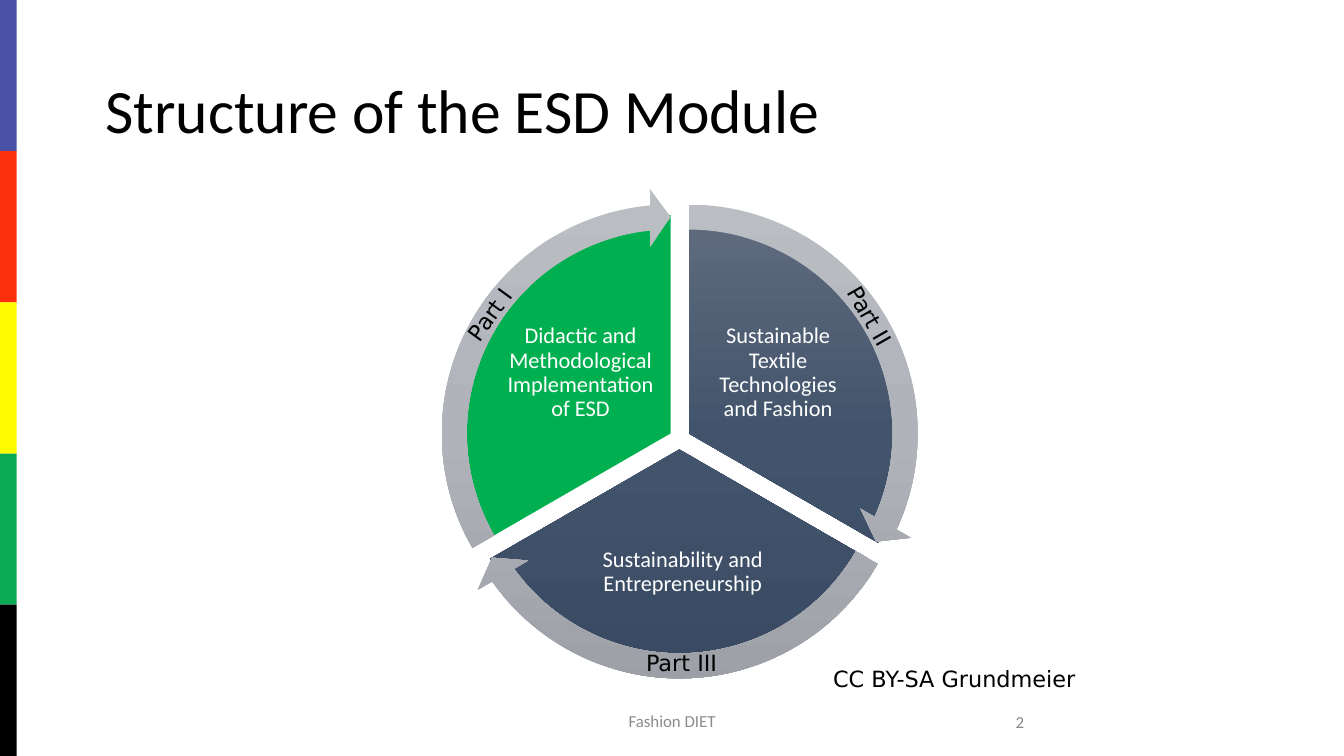
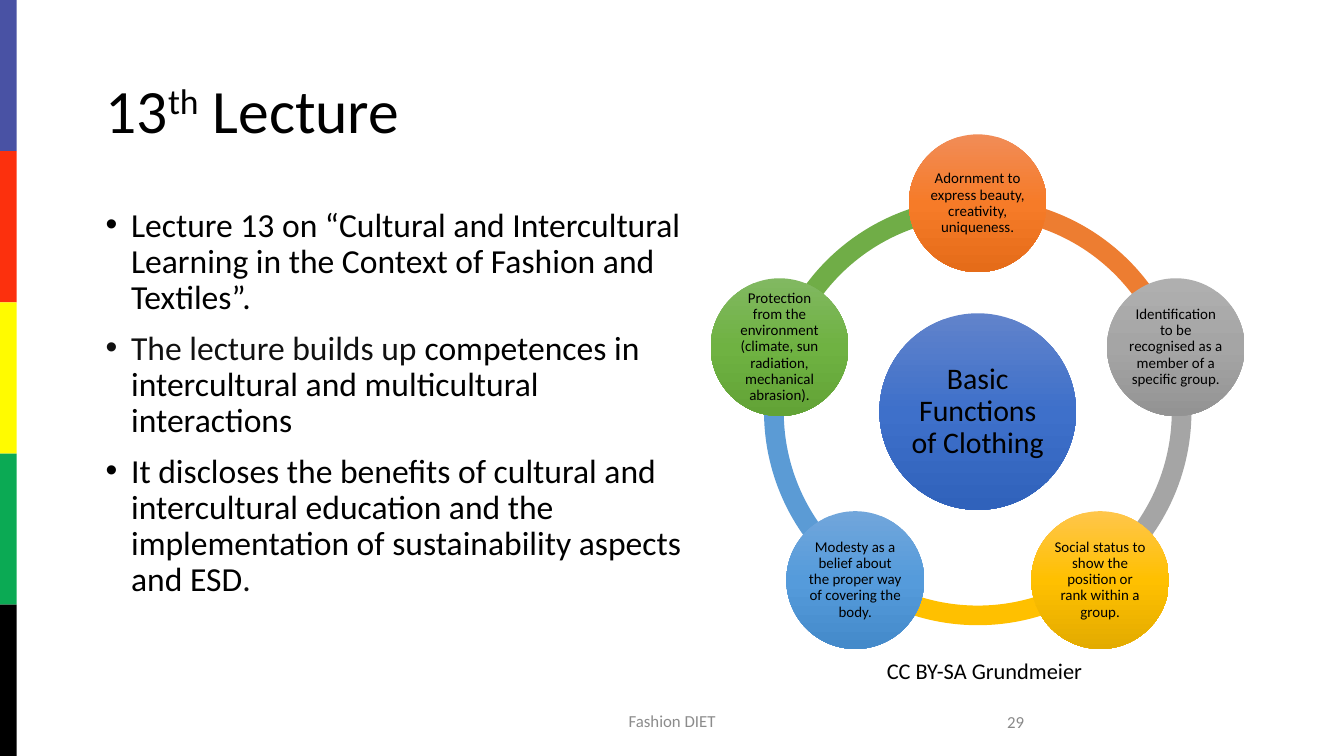
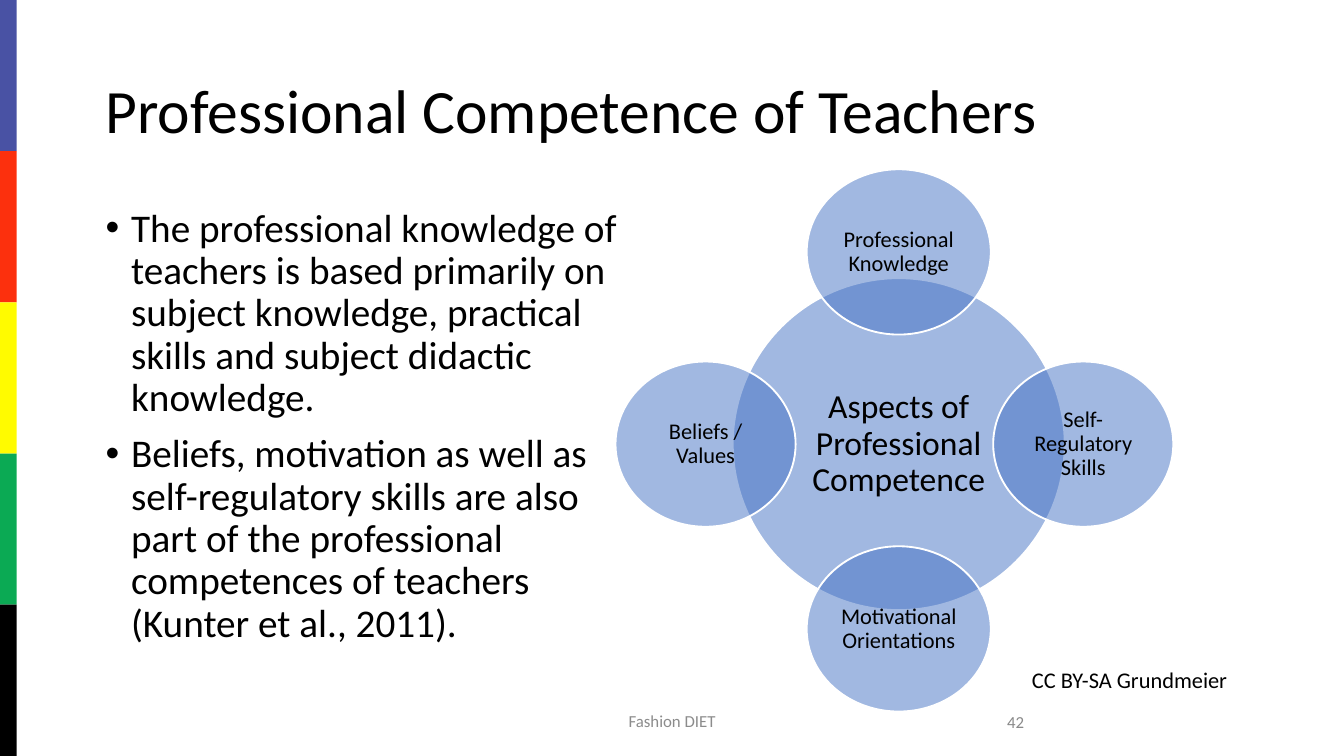
from copy import deepcopy
from math import cos, radians, sin

from lxml.etree import SubElement
from pptx import Presentation
from pptx.dml.color import RGBColor
from pptx.enum.shapes import MSO_SHAPE
from pptx.enum.text import MSO_ANCHOR, MSO_AUTO_SIZE, PP_ALIGN
from pptx.oxml.ns import qn
from pptx.util import Inches, Pt

COLS, ROWS = 80, 45
FULL_TURN = 216
INK = {
    "black": "000000", "soft": "111111", "white": "FFFFFF",
    "foot": "8C8C8C", "page": "898989", "leaf": "00B050", "blue": "4472C4",
}
BANDS = ["4952A4", "FC300D", "FFFB00", "0BAA54", "000000"]
FADES = {
    "slate": ["606B7D", "42546C", "394A62"],
    "steel": ["BABDC2", "B0B3BA", "9C9FA6"],
    "hub": ["6183CB", "3E70CA", "3062BB"],
    "orange": ["F18C57", "F67B28", "E56C19"],
    "grey": ["AFAFAF", "A5A5A5", "939393"],
    "gold": ["FFC64B", "FFC000", "E3AB00"],
    "sky": ["71A6DB", "559BDB", "448ACA"],
    "green": ["81B861", "6FB242", "62A336"],
}
ARCS = {"orange": "ED7D31", "grey": "A5A5A5", "gold": "FFC000",
        "sky": "5B9BD5", "green": "70AD47"}
CREDIT = "CC BY-SA Grundmeier"


class Deck:
    """Holds the shared style and the current slide on a grid of 80 by 45 cells."""

    def __init__(self):
        self.show = Presentation()
        self.show.slide_width = Inches(10)
        self.show.slide_height = Inches(5.625)
        self.cell = self.show.slide_width / COLS
        self.slide = None

    def place(self, box):
        return [round(n * self.cell) for n in box]

    def open(self, title, page):
        self.slide = self.show.slides.add_slide(self.show.slide_layouts[6])
        tall = ROWS / len(BANDS)
        for i, hue in enumerate(BANDS):
            self.shape(MSO_SHAPE.RECTANGLE, (0, i * tall, 1, tall), hue)
        self.text((5.5, 2.4, 69, 8.7), [title], 33, mid=True, lead=0.9)
        self.text((26.5, 41.7, 27, 2.4), ["Fashion DIET"], 9, "foot",
                  PP_ALIGN.CENTER, mid=True)
        self.text((43.75, 41.75, 18, 2.4), [str(page)], 9, "page",
                  PP_ALIGN.RIGHT, mid=True)

    def shape(self, kind, box, fill, knobs=(), clear=None, edge=None):
        item = self.slide.shapes.add_shape(kind, *self.place(box))
        item.shadow.inherit = False
        for i, knob in enumerate(knobs):
            item.adjustments[i] = knob
        if isinstance(fill, list):
            self.fade(item, fill)
        else:
            item.fill.solid()
            item.fill.fore_color.rgb = RGBColor.from_string(fill)
        if clear:
            tint = item._element.spPr.find(".//" + qn("a:srgbClr"))
            SubElement(tint, qn("a:alpha")).set("val", str(clear * 1000))
        if edge:
            item.line.color.rgb = RGBColor.from_string(edge)
            item.line.width = Pt(1)
        else:
            item.line.fill.background()

    def fade(self, item, hues):
        item.fill.gradient()
        item.fill.gradient_angle = 270
        stops = item._element.spPr.find(".//" + qn("a:gsLst"))
        stops.insert(1, deepcopy(stops[0]))
        for i, stop in enumerate(item.fill.gradient_stops):
            stop.color.rgb = RGBColor.from_string(hues[i])
            stop.position = i / 2

    def text(self, box, paras, size, ink="black", align=PP_ALIGN.LEFT, mid=False,
             lead=None, inset=None, font="Calibri", turn=0, grow=False, dots=False):
        item = self.slide.shapes.add_textbox(*self.place(box))
        item.rotation = turn
        frame = item.text_frame
        frame.word_wrap = True
        frame.auto_size = MSO_AUTO_SIZE.SHAPE_TO_FIT_TEXT if grow else MSO_AUTO_SIZE.NONE
        frame.vertical_anchor = MSO_ANCHOR.MIDDLE if mid else MSO_ANCHOR.TOP
        if inset is not None:
            frame.margin_left = frame.margin_right = Inches(inset)
            frame.margin_top = frame.margin_bottom = Inches(inset)
        for i, runs in enumerate(paras):
            para = frame.paragraphs[0] if i == 0 else frame.add_paragraph()
            para.alignment = align
            if lead:
                para.line_spacing = lead
            if i:
                para.space_before = Pt(7.5)
            if dots:
                self.dot(para)
            para.font.size = Pt(size)
            para.font.name = font
            para.font.color.rgb = RGBColor.from_string(INK[ink])
            for part in [runs] if isinstance(runs, str) else runs:
                self.run(para, part)

    def run(self, para, part):
        words, style = (part, None) if isinstance(part, str) else part
        run = para.add_run()
        run.text = words
        if style == "raised":
            run.font._element.set("baseline", "30000")
        elif style:
            run.font.color.rgb = RGBColor.from_string(INK[style])

    def dot(self, para):
        props = para._p.get_or_add_pPr()
        props.set("marL", str(Inches(0.19)))
        props.set("indent", str(-Inches(0.19)))
        SubElement(props, qn("a:buFont")).set("typeface", "Arial")
        SubElement(props, qn("a:buChar")).set("char", "•")

    def body(self, wide, paras, size):
        self.text((5.5, 12, wide, 28.5), paras, size, lead=0.9, dots=True)

    def label(self, box, words, size, ink="black", inset=0.02):
        self.text(box, [words], size, ink, PP_ALIGN.CENTER, True, 0.9, inset)

    def disc(self, spot, wide, tall, fill, words, size, inset=0.02, **look):
        x, y = spot
        self.shape(MSO_SHAPE.OVAL, (x - wide / 2, y - tall / 2, wide, tall), fill, **look)
        w, h = wide * 0.71, tall * 0.71
        self.label((x - w / 2, y - h / 2, w, h), words, size, inset=inset)

    def credit(self, x, y, wide, font="Calibri"):
        self.text((x, y, wide, 2.4), [CREDIT], 12, font=font, grow=True)


def module(deck):
    deck.open("Structure of the ESD Module", 2)
    wedges = [
        (28, 12.8, 162, 18, FADES["slate"], (41.68, 18.32, 9.28, 7.76),
         "Sustainable Textile Technologies and Fashion"),
        (27.44, 13.76, 18, 90, FADES["slate"], (33.68, 30.64, 13.92, 6.8),
         "Sustainability and Entrepreneurship"),
        (26.92, 12.8, 90, 162, INK["leaf"], (29.92, 18.32, 9.28, 7.76),
         "Didactic and Methodological Implementation of ESD"),
    ]
    for x, y, start, end, fill, box, words in wedges:
        deck.shape(MSO_SHAPE.PIE, (x, y, 26, 26), fill, (start, end))
        deck.label(box, words, 12, "white")
    for x, y, start, end, *_ in wedges:
        deck.shape(MSO_SHAPE.CIRCULAR_ARROW, (x - 1.6, y - 1.6, 29.2, 29.2),
                   FADES["steel"], (0.051, 3.275, end - 3.275, start, 0.059))
    for words, x, y, turn in [("Part I", 24.08, 17.52, 306),
                              ("Part II", 46.72, 17.6, 60.2),
                              ("Part III", 35.52, 38.24, 0)]:
        deck.text((x, y, 10.1, 2.4), [words], 12, align=PP_ALIGN.CENTER,
                  font="DejaVu Sans", turn=turn, grow=True)
    deck.credit(48.8, 39.2, 17.76, "DejaVu Sans")


def lecture(deck):
    deck.open(["13", ("th", "raised"), " Lecture"], 29)
    deck.body(37, [
        "Lecture 13 on “Cultural and Intercultural Learning in the Context of "
        "Fashion and Textiles”.",
        [("The lecture builds up ", "soft"),
         "competences in intercultural and multicultural interactions"],
        ["It discloses the benefits of cultural and intercultural education and "
         "the implementation of sustainability aspects and ESD", (".", "soft")],
    ], 18)
    x, y, reach, ring = 58.2, 24.5, 12.4, 25.44
    step = FULL_TURN / len(ARCS)
    for i, hue in reversed(list(enumerate(ARCS.values()))):
        start = (162 + i * step) % FULL_TURN
        deck.shape(MSO_SHAPE.BLOCK_ARC, (x - ring / 2, y - ring / 2, ring, ring), hue,
                   (start, (start + step) % FULL_TURN, 0.046))
    deck.disc((x, y), 11.7, 11.7, FADES["hub"], "Basic Functions of Clothing", 16)
    needs = [
        "Adornment to express beauty, creativity, uniqueness.",
        "Identification to be recognised as a member of a specific group.",
        "Social status to show the position or rank within a group.",
        "Modesty as a belief about the proper way of covering the body.",
        "Protection from the environment (climate, sun radiation, mechanical abrasion).",
    ]
    for i, (hue, words) in enumerate(zip(ARCS, needs)):
        turn = radians(i * 360 / len(needs) - 90)
        spot = x + reach * cos(turn), y + reach * sin(turn)
        deck.disc(spot, 8.2, 8.2, FADES[hue], words, 8, 0.01)
    deck.credit(52, 38.7, 16.64)


def skills(deck):
    deck.open("Professional Competence of Teachers", 42)
    deck.body(32, [
        "The professional knowledge of teachers is based primarily on subject "
        "knowledge, practical skills and subject didactic knowledge.",
        "Beliefs, motivation as well as self-regulatory skills are also part of "
        "the professional competences of teachers (Kunter et al., 2011).",
    ], 21)
    look = {"clear": 50, "edge": INK["white"]}
    x, y = 53.5, 26.44
    deck.disc((x, y), 19.76, 19.76, INK["blue"],
              "Aspects of Professional Competence", 18, 0.03, **look)
    for spot, wide, words in [((x, 15), 10.96, "Professional Knowledge"),
                              ((64.48, y), 10.72, "Self-Regulatory Skills"),
                              ((x, 37.44), 10.96, "Motivational Orientations"),
                              ((42, y), 10.72, "Beliefs / Values")]:
        deck.disc(spot, wide, 9.84, INK["blue"], words, 12, **look)
    deck.credit(60.64, 39.28, 13.84)


def main():
    deck = Deck()
    for build in (module, lecture, skills):
        build(deck)
    deck.show.save("out.pptx")


if __name__ == "__main__":
    main()
